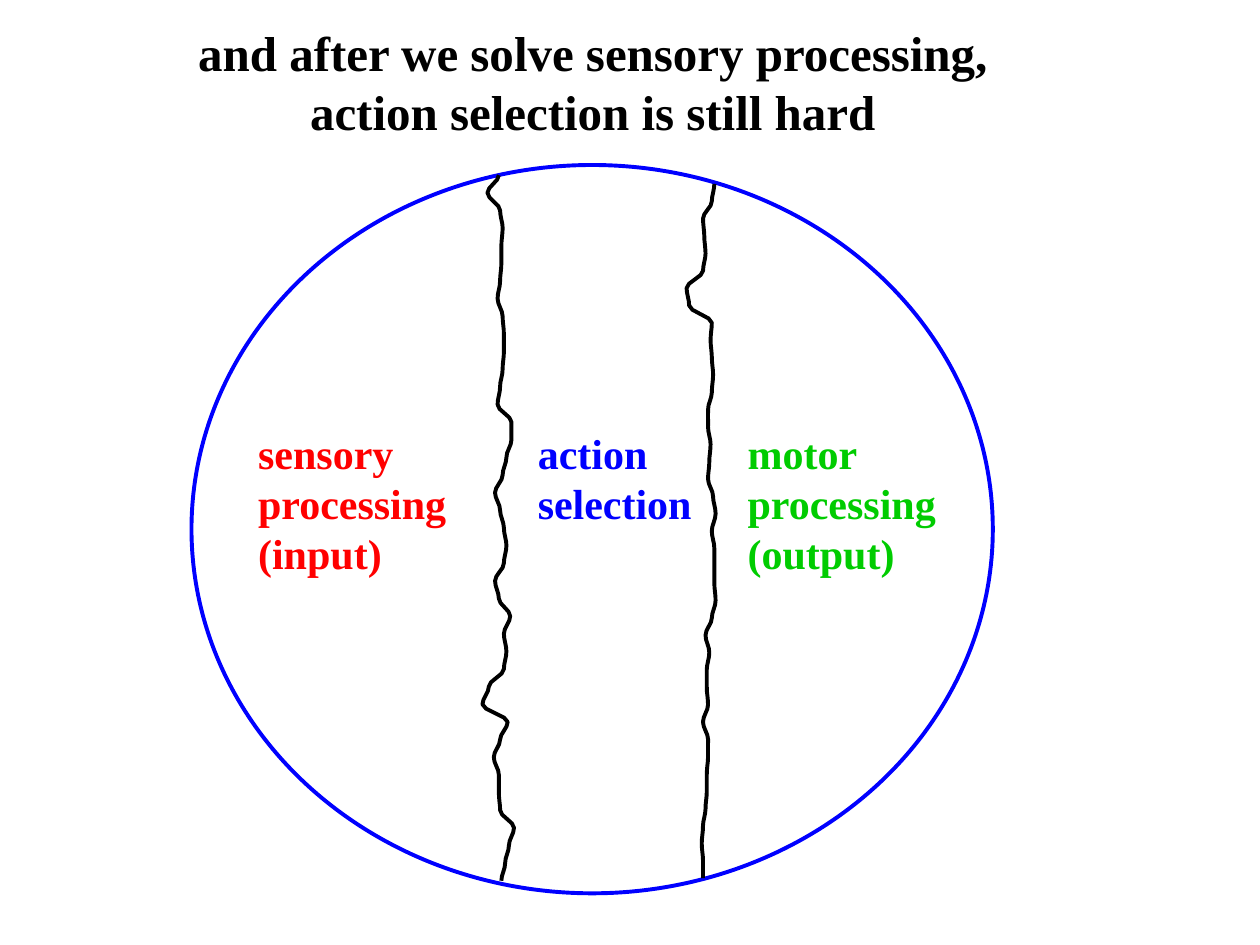
from itertools import pairwise
from math import cos, pi, radians, sin

from pptx import Presentation
from pptx.dml.color import RGBColor
from pptx.enum.shapes import MSO_SHAPE
from pptx.enum.text import MSO_AUTO_SIZE, PP_ALIGN
from pptx.util import Inches, Pt

COLORS = {"black": "000000", "blue": "0000FF", "red": "FF0000", "green": "00CC00"}
COLUMNS, ROWS = 100, 75
TILT = -3  # degrees both borders lean
LABEL_TOP, LABEL_LINE, LABEL_PADDING = 33.4, 4, 1.1
SUBSTEPS = 4  # points that round off each wobble of a border

# A border runs down a base column; its wobbles are the sideways drift,
# in tenths of a column, at equal steps from the top row to the bottom row.
BORDERS = {
    "input": {
        "base": 40, "top": 13.9, "bottom": 69.9, "center": (39.35, 41.9),
        "wobbles": [-4, -13, -3, -1, -2, -2, -3, -5, -1, 0, 0, -1, -3, -5,
                    6, 6, 2, -1, -7, -3, 0, 2, 0, -7, -4, 5, 0, 2, 0, -12,
                    -17, 3, -3, -8, -4, -4, -3, 8, 4, 1, -2],
    },
    "output": {
        "base": 56, "top": 14.6, "bottom": 69.7, "center": (56.2, 42.15),
        "wobbles": [7, 5, -2, -1, 0, -2, -15, -13, 5, 4, 5, 6, 5, 2,
                    2, 4, 3, 2, 6, 8, 5, 7, 7, 7, 8, 5, 0, 3, 1, 1,
                    2, -2, 2, 2, 1, 1, 0, -2, -3, -2, -2],
    },
}


def wobbly_line(base, top, bottom, wobbles):
    """Return (column, row) points that ease from each wobble to the next."""
    step = (bottom - top) / (len(wobbles) - 1)
    points = [(base + wobbles[0] / 10, top)]
    for i, (start, end) in enumerate(pairwise(wobbles)):
        for k in range(1, SUBSTEPS + 1):
            share = k / SUBSTEPS
            ease = (1 - cos(pi * share)) / 2
            drift = start + (end - start) * ease
            points.append((base + drift / 10, top + (i + share) * step))
    return points


def turn(point, center, degrees):
    """Rotate a point clockwise around a center."""
    (x, y), (cx, cy) = point, center
    c, n = cos(radians(degrees)), sin(radians(degrees))
    dx, dy = x - cx, y - cy
    return cx + dx * c - dy * n, cy + dx * n + dy * c


class Deck:
    def __init__(self):
        self.prs = Presentation()
        self.prs.slide_width, self.prs.slide_height = Inches(10), Inches(7.5)
        self.s = self.prs.slides.add_slide(self.prs.slide_layouts[6])

    def grid(self, *cells):
        """Turn alternating columns and rows into slide lengths."""
        units = self.prs.slide_width / COLUMNS, self.prs.slide_height / ROWS
        return [round(cell * units[i % 2]) for i, cell in enumerate(cells)]

    def outline(self, sp, color):
        sp.shadow.inherit = False
        sp.fill.background()
        sp.line.color.rgb = RGBColor.from_string(COLORS[color])
        sp.line.width = Pt(2.25)

    def ellipse(self, box, color):
        self.outline(self.s.shapes.add_shape(MSO_SHAPE.OVAL, *self.grid(*box)), color)

    def border(self, center, color, **line):
        """Draw a wobbly line upright, then tilt it into place."""
        points = [self.grid(*turn(pt, center, -TILT)) for pt in wobbly_line(**line)]
        builder = self.s.shapes.build_freeform(*points[0])
        builder.add_line_segments(points[1:], close=False)
        sp = builder.convert_to_shape()
        sp.rotation = TILT
        self.outline(sp, color)

    def text(self, box, lines, size, color, align=PP_ALIGN.LEFT):
        tf = self.s.shapes.add_textbox(*self.grid(*box)).text_frame
        tf.word_wrap = False
        tf.auto_size = MSO_AUTO_SIZE.SHAPE_TO_FIT_TEXT
        style = {"name": "Times New Roman", "size": Pt(size), "bold": True}
        for i, line in enumerate(lines):
            p = tf.add_paragraph() if i else tf.paragraphs[0]
            p.alignment = align
            r = p.add_run()
            r.text = line
            for key, value in style.items():
                setattr(r.font, key, value)
            r.font.color.rgb = RGBColor.from_string(COLORS[color])

    def label(self, left, width, color, lines):
        height = len(lines) * LABEL_LINE + LABEL_PADDING
        self.text((left, LABEL_TOP, width, height), lines, 24, color)


def main():
    deck = Deck()
    title = ["and after we solve sensory processing,", "action selection is still hard"]
    deck.text((14.4, 1.3, 65.3, 10.4), title, 28, "black", PP_ALIGN.CENTER)
    deck.ellipse((15.2, 13.1, 63.6, 57.8), "blue")
    for border in BORDERS.values():
        deck.border(color="black", **border)

    labels = [
        (19.5, 17.1, "red", ["sensory", "processing", "(input)"]),
        (58.35, 17.1, "green", ["motor", "processing", "(output)"]),
        (41.7, 14.3, "blue", ["action", "selection"]),
    ]
    for label in labels:
        deck.label(*label)
    deck.prs.save("out.pptx")


if __name__ == "__main__":
    main()
